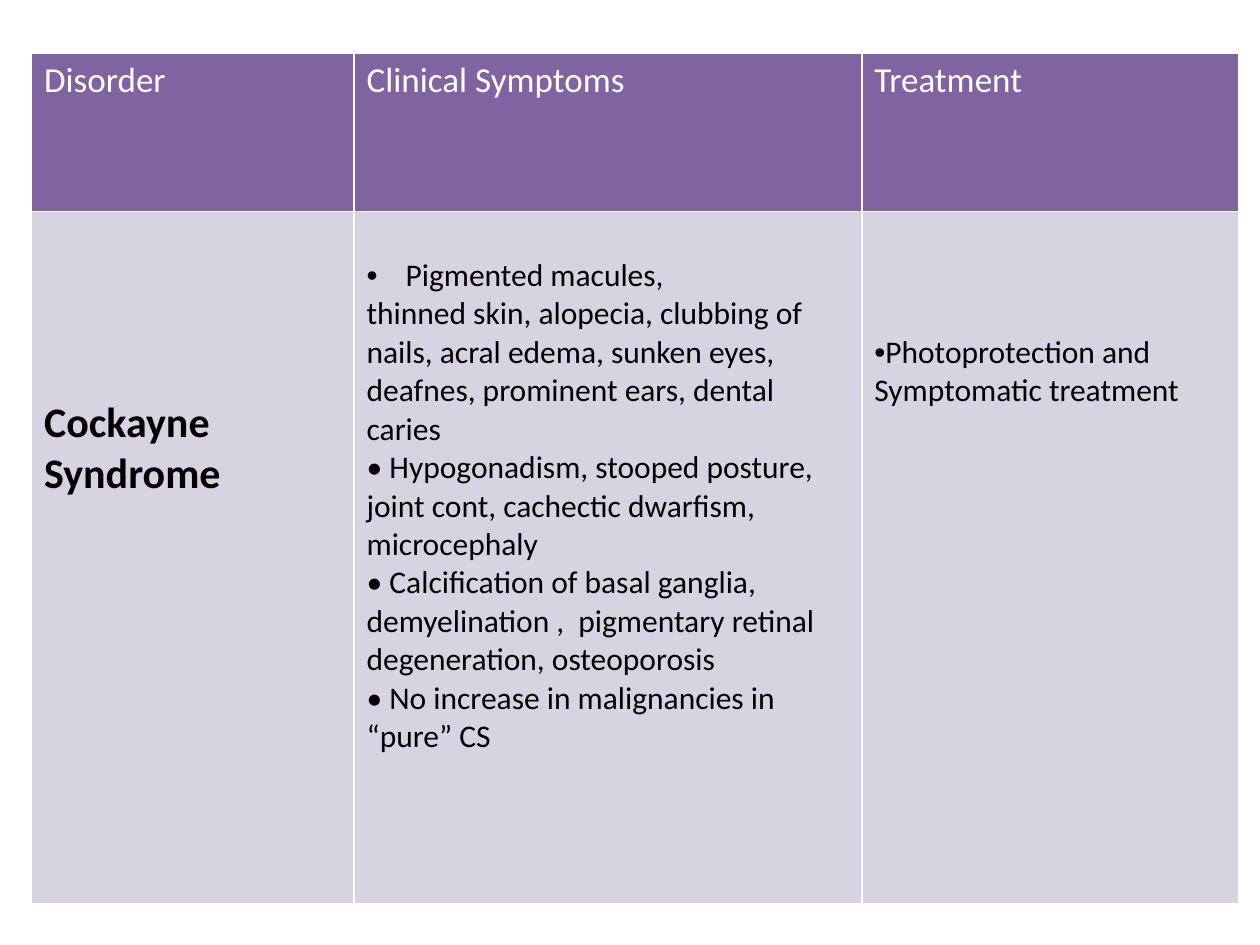
"""Build a slide with a table on Cockayne syndrome."""
from lxml import etree
from pptx import Presentation
from pptx.dml.color import RGBColor
from pptx.oxml.ns import qn
from pptx.util import Inches, Pt

COLS = [2.56, 4.03, 2.99]
ROWS = [1.26, 5.49]
LINE = 0.305
PAD = 0.05
HEADS = ["Disorder", "Clinical Symptoms", "Treatment"]
SIGNS = [
    "Pigmented macules,",
    "thinned skin, alopecia, clubbing of nails, acral edema, sunken eyes, "
    "deafnes, prominent ears, dental caries",
    "• Hypogonadism, stooped posture, joint cont, cachectic dwarfism, microcephaly",
    "• Calcification of basal ganglia, demyelination ,  pigmentary retinal",
    "degeneration, osteoporosis",
    "• No increase in malignancies in “pure” CS",
]
CARE = ["Photoprotection and Symptomatic treatment"]


def color(code):
    return RGBColor.from_string(code)


def fill_cell(cell, lines, size, ink, back, top=PAD, bold=False, hang=None):
    cell.margin_top = Inches(top)
    cell.fill.solid()
    cell.fill.fore_color.rgb = color(back)
    props = cell._tc.get_or_add_tcPr()
    for spot, side in enumerate(["lnL", "lnR", "lnT", "lnB"]):
        edge = etree.Element(qn("a:" + side), w=str(Pt(1)))
        paint = etree.SubElement(edge, qn("a:solidFill"))
        etree.SubElement(paint, qn("a:srgbClr"), val="FFFFFF")
        props.insert(spot, edge)
    frame = cell.text_frame
    frame.text = "\n".join(lines)
    if hang is not None:
        first = frame.paragraphs[0]._p.get_or_add_pPr()
        first.set("marL", str(Inches(hang)))
        first.set("indent", str(-Inches(hang)))
        etree.SubElement(first, qn("a:buFont"), typeface="Arial")
        etree.SubElement(first, qn("a:buChar"), char="•")
    for para in frame.paragraphs:
        para.font.name = "Calibri"
        para.font.size = Pt(size)
        para.font.bold = bold
        para.font.color.rgb = color(ink)


deck = Presentation()
deck.slide_width, deck.slide_height = Inches(10), Inches(7.5)
slide = deck.slides.add_slide(deck.slide_layouts[6])
table = slide.shapes.add_table(
    len(ROWS), len(COLS), Inches(0.25), Inches(0.42),
    Inches(sum(COLS)), Inches(sum(ROWS))).table
for col, width in zip(table.columns, COLS):
    col.width = Inches(width)
for row, height in zip(table.rows, ROWS):
    row.height = Inches(height)

for spot, head in enumerate(HEADS):
    fill_cell(table.cell(0, spot), [head], 20, "FFFFFF", "8064A2")

BODY = [
    (["Cockayne Syndrome"], 24, 14 / 3, True, None),
    (SIGNS, 18, 1, False, 0.31),
    (CARE, 18, 3, False, 0),
]
for spot, (lines, size, skip, bold, hang) in enumerate(BODY):
    fill_cell(table.cell(1, spot), lines, size, "000000", "D8D3E0",
              PAD + skip * LINE, bold, hang)

deck.save("out.pptx")
